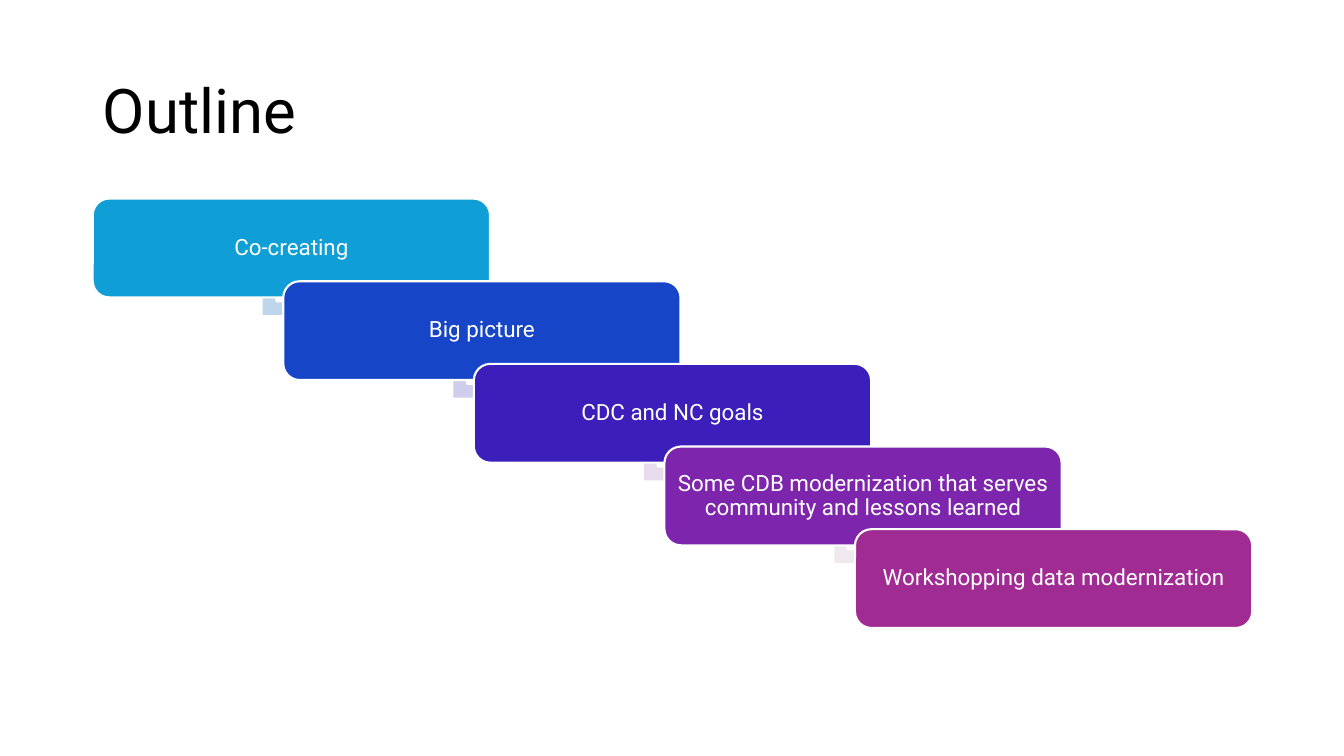
from pptx import Presentation
from pptx.dml.color import RGBColor
from pptx.enum.shapes import MSO_SHAPE
from pptx.enum.text import MSO_ANCHOR, MSO_AUTO_SIZE, PP_ALIGN
from pptx.util import Inches, Pt

FONT = "Roboto"
COLORS = {
    "title": "000000",
    "white": "FFFFFF",
    "steps": ["0F9ED5", "1745C7", "3C1EBA", "7D25AD", "A02B93"],
    "arrows": ["BDD6EB", "CECDEB", "E6DCED", "F0E8EF"],
}
TITLE = "Outline"
STEPS = [
    "Co-creating",
    "Big picture",
    "CDC and NC goals",
    "Some CDB modernization that serves community and lessons learned",
    "Workshopping data modernization",
]

LEFT, TOP = 0.92, 1.97
STEP_W, STEP_H = 3.94, 0.98
DX, DY = 1.89, 0.82
ARROW_LEFT, ARROW_TOP = 2.63, 2.69
ARROW_W, ARROW_H = 0.45, 0.52


def add_block(slide, kind, box, adjustments, color):
    sp = slide.shapes.add_shape(kind, *[Inches(v) for v in box])
    for i, value in enumerate(adjustments):
        sp.adjustments[i] = value
    sp.shadow.inherit = False
    sp.fill.solid()
    sp.fill.fore_color.rgb = RGBColor.from_string(color)
    sp.line.color.rgb = RGBColor.from_string(COLORS["white"])
    sp.line.width = Pt(1.5)
    return sp


def write(tf, text, size, color, align):
    tf.word_wrap = True
    tf.auto_size = MSO_AUTO_SIZE.NONE
    tf.vertical_anchor = MSO_ANCHOR.MIDDLE
    p = tf.paragraphs[0]
    p.alignment = align
    p.line_spacing = 0.9
    r = p.add_run()
    r.text = text
    r.font.name = FONT
    r.font.size = Pt(size)
    r.font.color.rgb = RGBColor.from_string(color)


def main():
    prs = Presentation()
    prs.slide_width, prs.slide_height = Inches(13.33), Inches(7.5)
    slide = prs.slides.add_slide(prs.slide_layouts[5])

    title = slide.shapes.title
    title.left, title.top = Inches(LEFT), Inches(0.4)
    title.width, title.height = Inches(11.5), Inches(1.45)
    write(title.text_frame, TITLE, 44, COLORS["title"], PP_ALIGN.LEFT)

    for i, (text, color) in enumerate(zip(STEPS, COLORS["steps"])):
        x, y = i * DX, i * DY
        if i < len(COLORS["arrows"]):
            arrow = add_block(slide, MSO_SHAPE.BENT_UP_ARROW,
                              (ARROW_LEFT + x, ARROW_TOP + y, ARROW_W, ARROW_H),
                              (0.328, 0.25, 0.358), COLORS["arrows"][i])
            arrow.rotation = 90
        step = add_block(slide, MSO_SHAPE.ROUNDED_RECTANGLE,
                         (LEFT + x, TOP + y, STEP_W, STEP_H), (0.167,), color)
        tf = step.text_frame
        tf.margin_left = tf.margin_right = Inches(0.07)
        tf.margin_top = tf.margin_bottom = Inches(0.07)
        write(tf, text, 16, COLORS["white"], PP_ALIGN.CENTER)

    prs.save("out.pptx")


if __name__ == "__main__":
    main()
